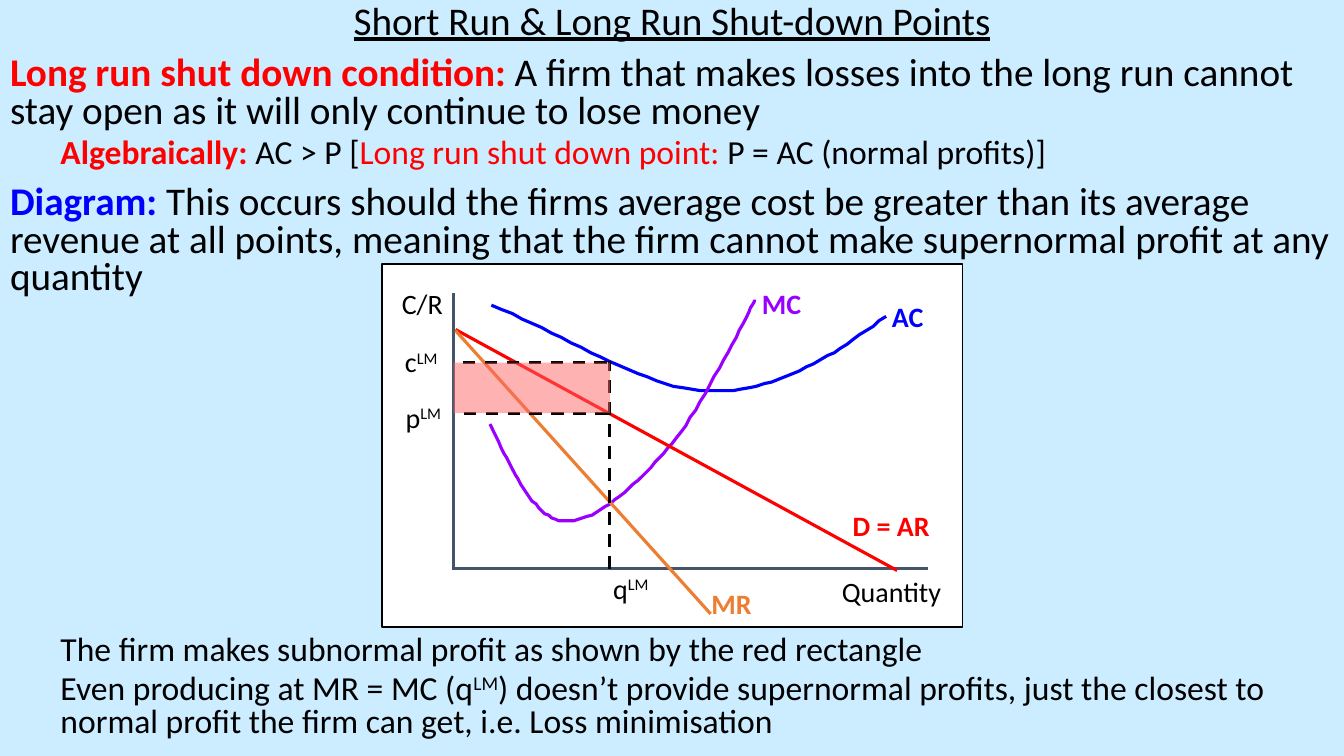
from lxml import etree
from pptx import Presentation
from pptx import util as u
from pptx.dml import color
from pptx.enum import dml, shapes, text
from pptx.oxml import ns

COLORS = {
    "background": "CCECFF", "panel": "FFFFFF", "ink": "000000", "axis": "44546A",
    "red": "FF0000", "blue": "0000FF", "purple": "9900FF", "orange": "ED7D31",
    "loss": "FF6666",
}
CURVE_STEPS = 24


def rgb(name):
    return color.RGBColor.from_string(COLORS[name])


def bezier_points(start, *segments):
    """Points along a chain of cubic curves; each segment is two controls and an end."""
    points = [start]
    for c1, c2, end in segments:
        origin = points[-1]
        for step in range(1, CURVE_STEPS + 1):
            t = step / CURVE_STEPS
            weights = ((1 - t) ** 3, 3 * t * (1 - t) ** 2, 3 * t * t * (1 - t), t ** 3)
            points.append(tuple(
                sum(w * p[axis] for w, p in zip(weights, (origin, c1, c2, end)))
                for axis in (0, 1)))
    return points


class SlideBuilder:
    font = "Calibri"
    curve_width = 2.25

    def __init__(self, slide):
        self.slide = slide
        slide.background.fill.solid()
        slide.background.fill.fore_color.rgb = rgb("background")
        self.diagram = None

    def start_diagram(self):
        self.diagram = self.slide.shapes.add_group_shape().shapes

    def add_runs(self, paragraph, parts, size):
        """Parts are (text, colour, style); style holds b, u or ^ for superscript."""
        for words, ink, style in parts:
            run = paragraph.add_run()
            run.text = words
            run.font.name, run.font.size = self.font, u.Pt(size)
            run.font.bold, run.font.underline = "b" in style, "u" in style
            run.font.color.rgb = rgb(ink)
            if "^" in style:
                run.font._element.set("baseline", "30000")

    def placeholder(self, holder, box, paragraphs):
        """Paragraphs are (level, size, space before, parts)."""
        holder.left, holder.top, holder.width, holder.height = map(u.Pt, box)
        frame = holder.text_frame
        frame.word_wrap = True
        frame.auto_size = text.MSO_AUTO_SIZE.NONE
        frame.vertical_anchor = text.MSO_ANCHOR.TOP
        for index, (level, size, before, parts) in enumerate(paragraphs):
            paragraph = frame.add_paragraph() if index else frame.paragraphs[0]
            paragraph.level = level
            paragraph.line_spacing = 0.8
            paragraph.space_before, paragraph.space_after = u.Pt(before), u.Pt(0)
            properties = paragraph._p.get_or_add_pPr()
            properties.set("marL", str(u.Pt(36 * level)))
            properties.set("indent", "0")
            etree.SubElement(properties, ns.qn("a:buNone"))
            self.add_runs(paragraph, parts, size)
        return frame

    def label(self, x, y, width, parts, centered=False):
        frame = self.diagram.add_textbox(*map(u.Pt, (x, y, width, 30))).text_frame
        frame.word_wrap = True
        if centered:
            frame.paragraphs[0].alignment = text.PP_ALIGN.CENTER
        self.add_runs(frame.paragraphs[0], parts, 20)

    def rectangle(self, box, fill, outline=None, opacity=None):
        area = self.diagram.add_shape(shapes.MSO_SHAPE.RECTANGLE, *map(u.Pt, box))
        area.shadow.inherit = False
        area.fill.solid()
        area.fill.fore_color.rgb = rgb(fill)
        if opacity:
            solid = area._element.spPr.find(ns.qn("a:solidFill"))
            etree.SubElement(solid[0], ns.qn("a:alpha"), val=str(opacity * 1000))
        if outline:
            area.line.color.rgb = rgb(outline)
            area.line.width = u.Pt(1)
        else:
            area.line.fill.background()

    def line(self, start, end, ink, dashed=False):
        connector = self.diagram.add_connector(
            shapes.MSO_CONNECTOR.STRAIGHT, *map(u.Pt, start + end))
        connector.line.color.rgb = rgb(ink)
        connector.line.width = u.Pt(self.curve_width)
        if dashed:
            connector.line.dash_style = dml.MSO_LINE.DASH
        etree.SubElement(connector._element.spPr, ns.qn("a:effectLst"))

    def curve(self, points, ink):
        outline = self.diagram.build_freeform(*points[0], scale=u.Pt(1))
        outline.add_line_segments(points[1:], close=False)
        cost = outline.convert_to_shape()
        cost.shadow.inherit = False
        cost.fill.background()
        cost.line.color.rgb = rgb(ink)
        cost.line.width = u.Pt(self.curve_width)


def main():
    deck = Presentation()
    deck.slide_width, deck.slide_height = u.Pt(960), u.Pt(540)
    builder = SlideBuilder(deck.slides.add_slide(deck.slide_layouts[1]))
    title, body = builder.slide.placeholders

    # Heading
    heading = builder.placeholder(title, (0, 0, 960, 36), [
        (0, 28, 0, [("Short Run & Long Run Shut-down Points", "ink", "u")])])
    heading.paragraphs[0].alignment = text.PP_ALIGN.CENTER

    # Explanation; the wide gap leaves room for the diagram
    builder.placeholder(body, (0, 37, 960, 503), [
        (0, 28, 0, [
            ("Long run shut down condition:", "red", "b"),
            (" A firm that makes losses into the long run cannot stay open as it will "
             "only continue to lose money", "ink", "")]),
        (1, 24, 5, [
            ("Algebraically: ", "red", "b"), ("AC > P [", "ink", ""),
            ("Long run shut down point: ", "red", ""),
            ("P = AC (normal profits)]", "ink", "")]),
        (0, 28, 10, [
            ("Diagram:", "blue", "b"),
            (" This occurs should the firms average cost be greater than its average "
             "revenue at all points, meaning that the firm cannot make supernormal "
             "profit at any quantity", "ink", "")]),
        (1, 24, 241, [
            ("The firm makes subnormal profit as shown by the red rectangle", "ink", "")]),
        (1, 24, 5, [
            ("Even producing at MR = MC (q", "ink", ""), ("LM", "ink", "^"),
            (") doesn’t provide supernormal profits, just the closest to normal profit "
             "the firm can get, i.e. Loss minimisation", "ink", "")]),
    ])

    # Panel and axes
    builder.start_diagram()
    builder.rectangle((272.9, 188.6, 414.7, 259.2), "panel", outline="ink")
    axis_x, axis_y = 324, 406.1
    builder.line((axis_x, 209.5), (axis_x, axis_y + 0.7), "axis")
    builder.line((axis_x, axis_y), (663.1, axis_y), "axis")
    builder.label(586, 406.8, 101.5, [("Quantity", "ink", "")], centered=True)
    builder.label(263.5, 200.9, 76.3, [("C/R", "ink", "")], centered=True)

    # Cost curves
    builder.curve(bezier_points(
        (632.9, 226.1),
        ((596.2, 252.7), (559.4, 278.6), (511.9, 279.4)),
        ((465.1, 280.8), (408.2, 241.9), (351.4, 218.2))), "blue")
    builder.curve(bezier_points(
        (349.9, 303.1),
        ((365.8, 336.2), (380.9, 369.4), (401.8, 372.2)),
        ((423.4, 375.1), (454.3, 347), (477.4, 320.4)),
        ((500.4, 294.5), (539.3, 213.8), (539.3, 213.8))), "purple")

    # Revenue lines
    builder.line((325.4, 235.4), (640.8, 407.5), "red")
    builder.line((325.4, 236.2), (507.6, 438.5), "orange")

    # Curve names
    for name, x, y, width, ink in (
            ("AC", 630, 210.2, 66.2, "blue"), ("MC", 537.1, 200.9, 66.2, "purple"),
            ("D = AR", 601.9, 360, 89.3, "red"), ("MR", 501.1, 415.4, 90, "orange")):
        builder.label(x, y, width, [(name, ink, "b")])

    # Loss-minimising quantity, price and cost
    for symbol, x, y in (("q", 421.2, 404.6), ("p", 272.9, 282.2), ("c", 271.4, 242.6)):
        builder.label(x, y, 59, [(symbol, "ink", ""), ("LM", "ink", "^")], centered=True)
    quantity, price, cost = 435.6, 295.2, 259
    builder.line((quantity - 1.4, price), (axis_x + 1, price), "ink", dashed=True)
    builder.line((quantity, axis_y), (quantity, cost - 1), "ink", dashed=True)
    builder.line((quantity - 2, cost), (axis_x + 1, cost), "ink", dashed=True)
    builder.rectangle((axis_x, cost, quantity - axis_x, price - cost), "loss", opacity=50)

    deck.save("out.pptx")


if __name__ == "__main__":
    main()
